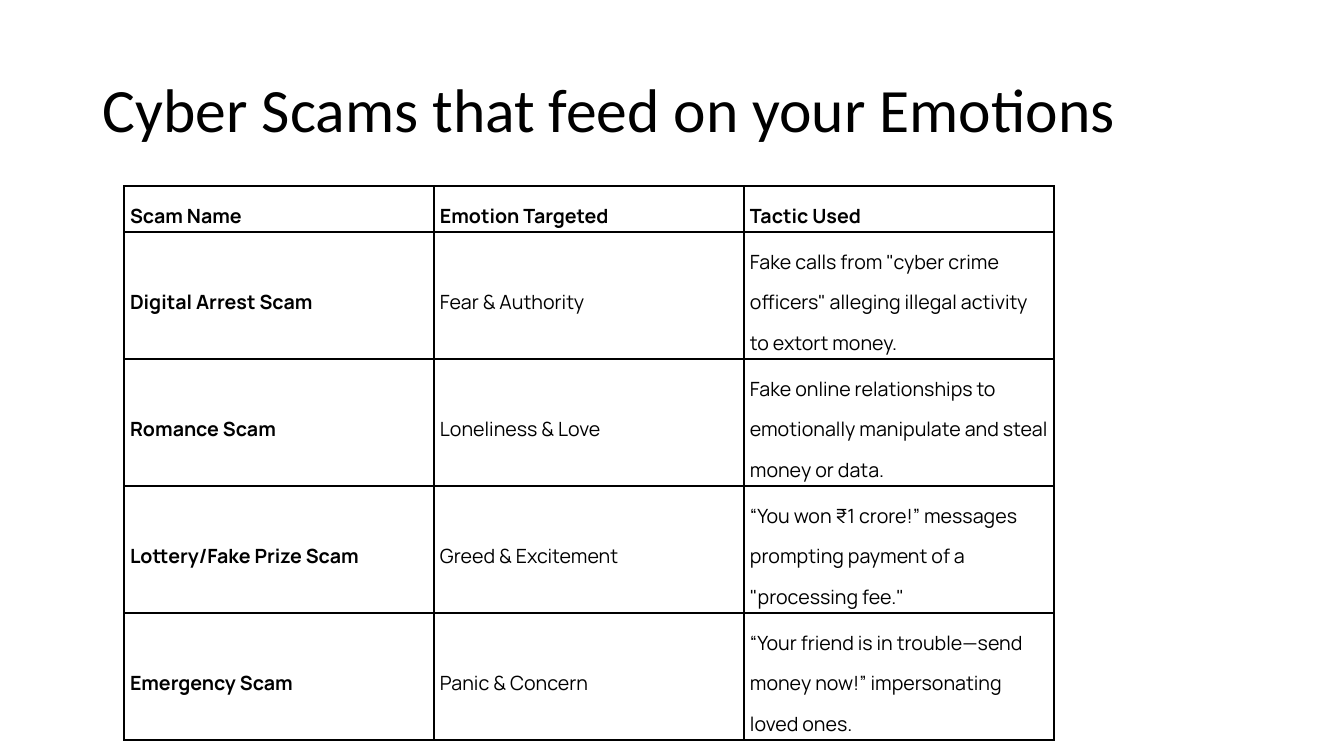
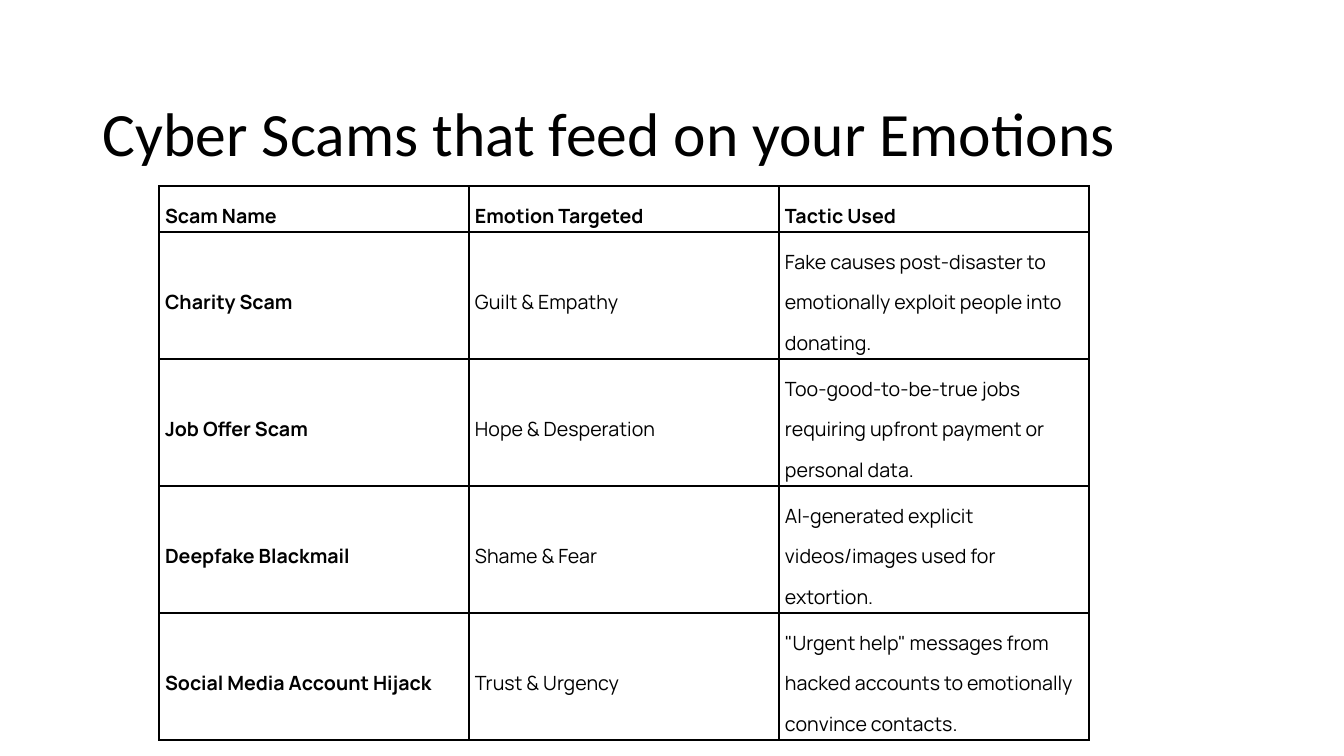
from lxml.etree import SubElement
from pptx import Presentation
from pptx.dml.color import RGBColor
from pptx.enum.text import MSO_ANCHOR as Anchor
from pptx.oxml.ns import qn
from pptx.util import Emu, Pt

PAGE_W, PAGE_H = 1344, 756
EMU_PER_PX = 12192000 / PAGE_W
BLANK_LAYOUT = 6

COLORS = {"paper": "FFFFFF", "ink": "000000"}
TITLE_FONT, TABLE_FONT = "Calibri", "Manrope"

TITLE = "Cyber Scams that feed on your Emotions"
TITLE_BOX = (93, 40, 1159, 146)
TABLE_TOP, COLUMN_W, HEADER_H, ROW_H = 186, 310, 46, 127
HEADINGS = ("Scam Name", "Emotion Targeted", "Tactic Used")

# One entry a slide: title line spacing, table left edge, scams
SLIDES = [
    (0.9, 124, [
        ("Digital Arrest Scam", "Fear & Authority",
         'Fake calls from "cyber crime officers" alleging illegal activity to extort money.'),
        ("Romance Scam", "Loneliness & Love",
         "Fake online relationships to emotionally manipulate and steal money or data."),
        ("Lottery/Fake Prize Scam", "Greed & Excitement",
         '“You won ₹1 crore!” messages prompting payment of a "processing fee."'),
        ("Emergency Scam", "Panic & Concern",
         "“Your friend is in trouble—send money now!” impersonating loved ones."),
    ]),
    (1.5, 159, [
        ("Charity Scam", "Guilt & Empathy",
         "Fake causes post-disaster to emotionally exploit people into donating."),
        ("Job Offer Scam", "Hope & Desperation",
         "Too-good-to-be-true jobs requiring upfront payment or personal data."),
        ("Deepfake Blackmail", "Shame & Fear",
         "AI-generated explicit videos/images used for extortion."),
        ("Social Media Account Hijack", "Trust & Urgency",
         '"Urgent help" messages from hacked accounts to emotionally convince contacts.'),
    ]),
]


def px(length):
    return Emu(round(length * EMU_PER_PX))


def write(frame, text, font, size, spacing, bold=False):
    para = frame.paragraphs[0]
    para.text = text
    para.line_spacing = spacing
    para.font.name = font
    para.font.size = Pt(size)
    para.font.bold = bold
    para.font.color.rgb = RGBColor.from_string(COLORS["ink"])


def add_title(page, box, spacing):
    frame = page.shapes.add_textbox(*map(px, box)).text_frame
    frame.word_wrap = True
    frame.vertical_anchor = Anchor.MIDDLE
    write(frame, TITLE, TITLE_FONT, 44, spacing)


def add_borders(cell):
    properties = cell._tc.get_or_add_tcPr()
    # Border lines come before the fill
    for index, side in enumerate(("a:lnL", "a:lnR", "a:lnT", "a:lnB")):
        line = SubElement(properties, qn(side), w=str(Pt(1)))
        fill = SubElement(line, qn("a:solidFill"))
        SubElement(fill, qn("a:srgbClr"), val=COLORS["ink"])
        properties.insert(index, line)


def fill_cell(cell, text, bold):
    cell.margin_left = cell.margin_right = px(6)
    cell.margin_top = cell.margin_bottom = px(3)
    cell.vertical_anchor = Anchor.MIDDLE
    cell.fill.background()
    add_borders(cell)
    write(cell.text_frame, text, TABLE_FONT, 14, 1.5, bold)


def add_scam_table(page, left, top, scams):
    rows = [HEADINGS, *scams]
    width = COLUMN_W * len(HEADINGS)
    height = HEADER_H + ROW_H * len(scams)
    table = page.shapes.add_table(
        len(rows), len(HEADINGS), px(left), px(top), px(width), px(height)).table
    table.first_row = table.horz_banding = False
    for column in table.columns:
        column.width = px(COLUMN_W)
    for r, texts in enumerate(rows):
        table.rows[r].height = px(ROW_H if r else HEADER_H)
        for c, text in enumerate(texts):
            fill_cell(table.cell(r, c), text, bold=r == 0 or c == 0)


def add_scam_slide(deck, spacing, table_left, scams):
    page = deck.slides.add_slide(deck.slide_layouts[BLANK_LAYOUT])
    page.background.fill.solid()
    page.background.fill.fore_color.rgb = RGBColor.from_string(COLORS["paper"])
    add_title(page, TITLE_BOX, spacing)
    add_scam_table(page, table_left, TABLE_TOP, scams)


def main():
    deck = Presentation()
    deck.slide_width, deck.slide_height = px(PAGE_W), px(PAGE_H)
    for content in SLIDES:
        add_scam_slide(deck, *content)
    deck.save("out.pptx")


if __name__ == "__main__":
    main()
